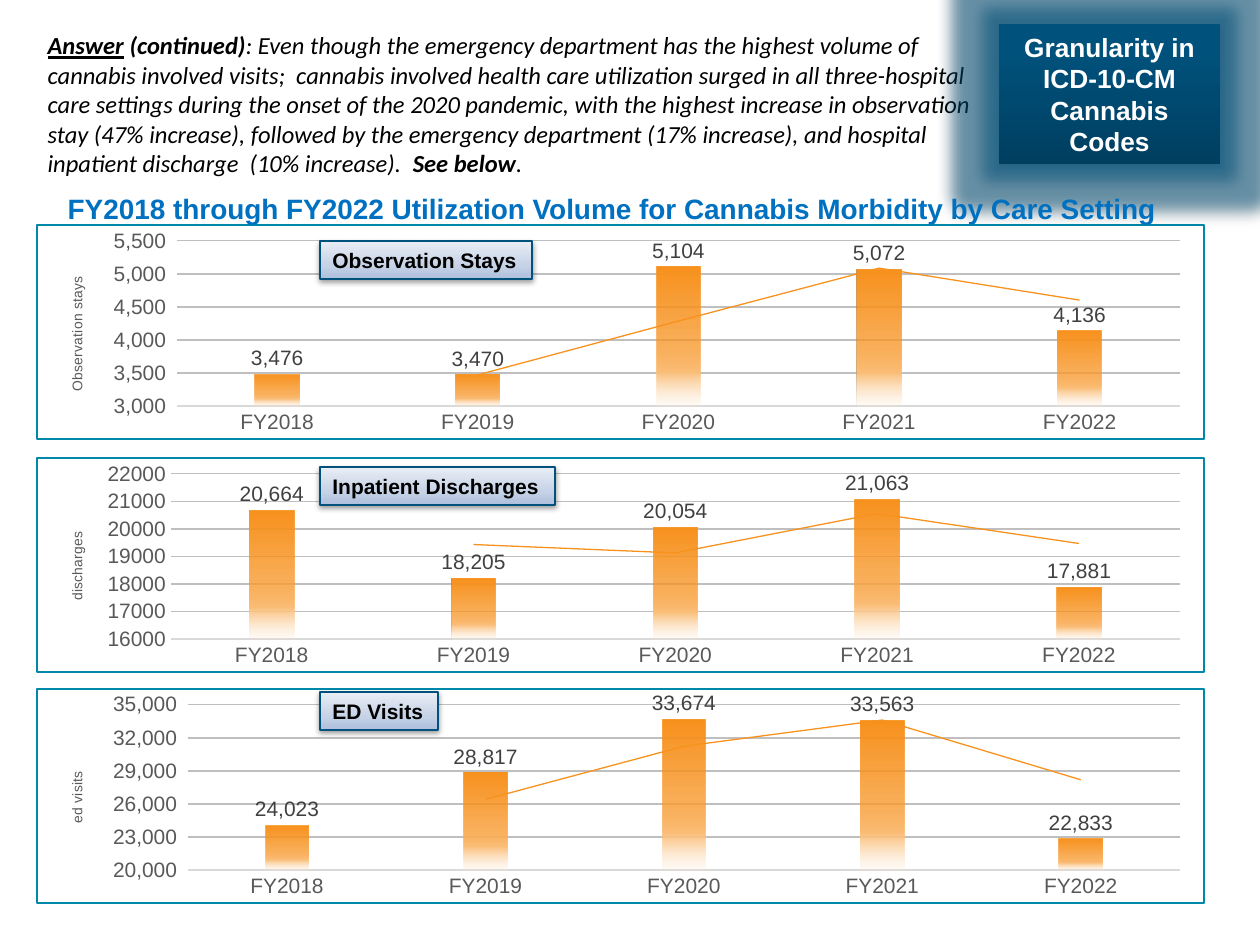
from pptx import Presentation
from pptx.chart.data import CategoryChartData
from pptx.dml.color import RGBColor
from pptx.enum.chart import XL_CHART_TYPE as ChartType, XL_LABEL_POSITION as LabelPosition
from pptx.enum.chart import XL_TICK_MARK as TickMark
from pptx.enum.shapes import MSO_SHAPE as Shape
from pptx.enum.text import MSO_ANCHOR as Anchor, MSO_AUTO_SIZE as AutoSize, PP_ALIGN as Align
from pptx.oxml import parse_xml
from pptx.oxml.ns import nsdecls, qn
from pptx.util import Pt

PX = 914400 / 126
BLACK = RGBColor(0x00, 0x00, 0x00)
WHITE = RGBColor(0xFF, 0xFF, 0xFF)
HEADING_BLUE = RGBColor(0x00, 0x70, 0xC0)
NAVY = RGBColor(0x00, 0x52, 0x7D)
TEAL = RGBColor(0x00, 0x88, 0xAA)
ORANGE = RGBColor(0xF8, 0x92, 0x1E)
AXIS_GRAY = RGBColor(0x59, 0x59, 0x59)
VALUE_GRAY = RGBColor(0x40, 0x40, 0x40)
BASE_GRAY = RGBColor(0xD9, 0xD9, 0xD9)
GRID_GRAY = RGBColor(0xBF, 0xBF, 0xBF)

BADGE_STOPS = [(0, "003F60", 100), (80, "00517C", 100), (100, "00527D", 100)]
TAG_STOPS = [(0, "ADBFDD", 100), (35, "C6D2E6", 100), (100, "E9EEF6", 100)]
BAR_STOPS = [(0, "F8921E", 100), (51, "F8921E", 75), (75, "FBBE78", 100), (100, "FEE9D2", 15)]
SHADOW = (f'<a:outerShdw {nsdecls("a")} blurRad="40000" dist="20000" dir="5400000" rotWithShape="0">'
          '<a:srgbClr val="000000"><a:alpha val="38000"/></a:srgbClr></a:outerShdw>')
GLOW = (f'<a:glow {nsdecls("a")} rad="228600">'
        f'<a:srgbClr val="{NAVY}"><a:alpha val="50000"/></a:srgbClr></a:glow>')


def paint(fill, properties, stops, angle):
    fill.gradient()
    marks = "".join(f'<a:gs pos="{at * 1000}"><a:srgbClr val="{color}"><a:alpha val="{alpha * 1000}"/>'
                    '</a:srgbClr></a:gs>' for at, color, alpha in stops)
    properties.replace(properties.find(qn("a:gradFill")), parse_xml(
        f'<a:gradFill {nsdecls("a")} rotWithShape="1"><a:gsLst>{marks}</a:gsLst>'
        f'<a:lin ang="{angle * 60000}" scaled="0"/></a:gradFill>'))


def place(parent, index, target, **fractions):
    for old in parent.findall(qn("c:layout")):
        parent.remove(old)
    modes = '<c:xMode val="edge"/><c:yMode val="edge"/>'
    sizes = "".join(f'<c:{key} val="{value:.4f}"/>' for key, value in fractions.items())
    parent.insert(index, parse_xml(f'<c:layout {nsdecls("c")}><c:manualLayout>{target}{modes}{sizes}'
                                   '</c:manualLayout></c:layout>'))


deck = Presentation()
deck.slide_width, deck.slide_height = round(1260 * PX), round(945 * PX)
slide = deck.slides.add_slide(deck.slide_layouts[1])
heading, answer = slide.placeholders

for holder, box in ((heading, (55, 185, 1128, 47)), (answer, (35, 24, 1202, 161))):
    holder.left, holder.top, holder.width, holder.height = (round(n * PX) for n in box)
    frame_format = {"auto_size": AutoSize.NONE, "vertical_anchor": Anchor.TOP, "word_wrap": holder is answer}
    for name, value in frame_format.items():
        setattr(holder.text_frame, name, value)

heading.text_frame.text = "FY2018 through FY2022 Utilization Volume for Cannabis Morbidity by Care Setting"
heading_line = heading.text_frame.paragraphs[0]
heading_line.alignment = Align.LEFT
for name, value in {"name": "Arial", "size": Pt(16), "bold": True}.items():
    setattr(heading_line.font, name, value)
heading_line.font.color.rgb = HEADING_BLUE

answer_lines = [
    [("Answer", True, True), (" (continued)", True, False),
     (": Even though the emergency department has the highest volume of", False, False)],
    [("cannabis involved visits;  cannabis involved health care utilization surged in all three-hospital",
      False, False)],
    [("care settings during the onset of the 2020 pandemic, with the highest increase in observation",
      False, False)],
    [("stay (47% increase), followed by the emergency department (17% increase), and hospital", False, False)],
    [("inpatient discharge  (10% increase).  ", False, False), ("See below", True, False), (".", False, False)],
]
for number, pieces in enumerate(answer_lines):
    line = answer.text_frame.paragraphs[0] if number == 0 else answer.text_frame.add_paragraph()
    line.space_before = Pt(0)
    line_properties = line._p.get_or_add_pPr()
    line_properties.set("marL", "0")
    line_properties.set("indent", "0")
    line_properties.append(parse_xml(f'<a:buNone {nsdecls("a")}/>'))
    for words, bold, underline in pieces:
        run = line.add_run()
        run.text = words
        run_format = {"name": "Calibri", "size": Pt(14), "italic": True, "bold": bold, "underline": underline}
        for name, value in run_format.items():
            setattr(run.font, name, value)
        run.font.color.rgb = BLACK

years = [f"FY{year}" for year in range(2018, 2023)]
chart_left, chart_width, chart_height = 36, 1169, 216
settings = [
    ("Observation stays", 224, 176, 274, (3000, 5500, 500), "#,##0_)", (3476, 3470, 5104, 5072, 4136)),
    ("discharges", 457, 170, 529, (16000, 22000, 1000), "0", (20664, 18205, 20054, 21063, 17881)),
    ("ed visits", 688, 187, 769, (20000, 35000, 3000), "#,##0_)", (24023, 28817, 33674, 33563, 22833)),
]
for unit, top, plot_left, unit_top, (low, high, step), axis_format, volumes in settings:
    data = CategoryChartData()
    data.categories = years
    data.add_series("Series 1", volumes)
    chart = slide.shapes.add_chart(ChartType.COLUMN_CLUSTERED, *(
        round(n * PX) for n in (chart_left, top, chart_width, chart_height)), data).chart
    chart.has_legend = chart.has_title = False
    chart.font.name, chart.font.size = "Arial", Pt(12)
    chart.font.color.rgb = AXIS_GRAY

    plot = chart.plots[0]
    plot.gap_width, plot.overlap, plot.vary_by_categories = 355, -70, False
    years_axis, volume_axis = chart.category_axis, chart.value_axis
    years_axis.major_tick_mark = volume_axis.major_tick_mark = TickMark.NONE
    years_axis.format.line.color.rgb = BASE_GRAY
    years_axis.format.line.width = Pt(0.75)
    for name, value in {"minimum_scale": low, "maximum_scale": high, "major_unit": step}.items():
        setattr(volume_axis, name, value)
    volume_axis.tick_labels.number_format = axis_format
    volume_axis.tick_labels.number_format_is_linked = False
    volume_axis.format.line.fill.background()
    volume_axis.major_gridlines.format.line.color.rgb = GRID_GRAY
    volume_axis.major_gridlines.format.line.width = Pt(0.75)

    volume_axis.axis_title.text_frame.text = unit
    unit_font = volume_axis.axis_title.text_frame.paragraphs[0].runs[0].font
    for name, value in {"name": "Arial", "size": Pt(8), "bold": False}.items():
        setattr(unit_font, name, value)
    unit_font.color.rgb = AXIS_GRAY
    place(volume_axis.axis_title._element, 1, "",
          x=(64 - chart_left) / chart_width, y=(unit_top - top) / chart_height)

    series = plot.series[0]
    series_element = series._element
    paint(series.format.fill, series_element.get_or_add_spPr(), BAR_STOPS, 90)
    labels = series.data_labels
    label_format = {"show_value": True, "position": LabelPosition.OUTSIDE_END,
                    "number_format": "#,##0", "number_format_is_linked": False}
    for name, value in label_format.items():
        setattr(labels, name, value)
    labels.font.name, labels.font.size = "Arial", Pt(12)
    labels.font.color.rgb = VALUE_GRAY
    series_element.find(qn("c:cat")).addprevious(parse_xml(
        f'<c:trendline {nsdecls("c", "a")}><c:spPr><a:ln w="9525"><a:solidFill><a:srgbClr val="{ORANGE}"/>'
        '</a:solidFill></a:ln></c:spPr><c:trendlineType val="movingAvg"/><c:period val="2"/>'
        '<c:dispRSqr val="0"/><c:dispEq val="0"/></c:trendline>'))

    chart_element = chart._chartSpace.find(qn("c:chart"))
    place(chart_element.find(qn("c:plotArea")), 0, '<c:layoutTarget val="inner"/>',
          x=(plot_left - chart_left) / chart_width, y=16 / chart_height,
          w=(1181 - plot_left) / chart_width, h=167 / chart_height)
    chart_element.addnext(parse_xml(
        f'<c:spPr {nsdecls("c", "a")}><a:noFill/><a:ln w="15875"><a:solidFill>'
        f'<a:srgbClr val="{TEAL}"/></a:solidFill></a:ln></c:spPr>'))

boxes = [
    (["Granularity in ICD-10-CM", "Cannabis Codes"], (999, 24, 221, 140), True),
    (["Observation Stays"], (320, 241, 212, 38), False),
    (["Inpatient Discharges"], (320, 467, 235, 38), False),
    (["ED Visits"], (320, 692, 118, 38), False),
]
for lines, area, is_badge in boxes:
    box = slide.shapes.add_shape(Shape.RECTANGLE, *(round(n * PX) for n in area))
    paint(box.fill, box._element.spPr, BADGE_STOPS if is_badge else TAG_STOPS, 270)
    if is_badge:
        box.line.fill.background()
    else:
        box.line.color.rgb = NAVY
        box.line.width = Pt(0.75)
    box.shadow.inherit = False
    effects = box._element.spPr.find(qn("a:effectLst"))
    for effect in [GLOW, SHADOW] if is_badge else [SHADOW]:
        effects.append(parse_xml(effect))
    box.text_frame.word_wrap = is_badge
    box.text_frame.text = "\n".join(lines)
    for line in box.text_frame.paragraphs:
        line.alignment = Align.CENTER if is_badge else Align.LEFT
        for name, value in {"name": "Arial", "size": Pt(15 if is_badge else 12), "bold": True}.items():
            setattr(line.font, name, value)
        line.font.color.rgb = WHITE if is_badge else BLACK

slide.shapes._spTree.append(heading._element)
deck.save("out.pptx")
